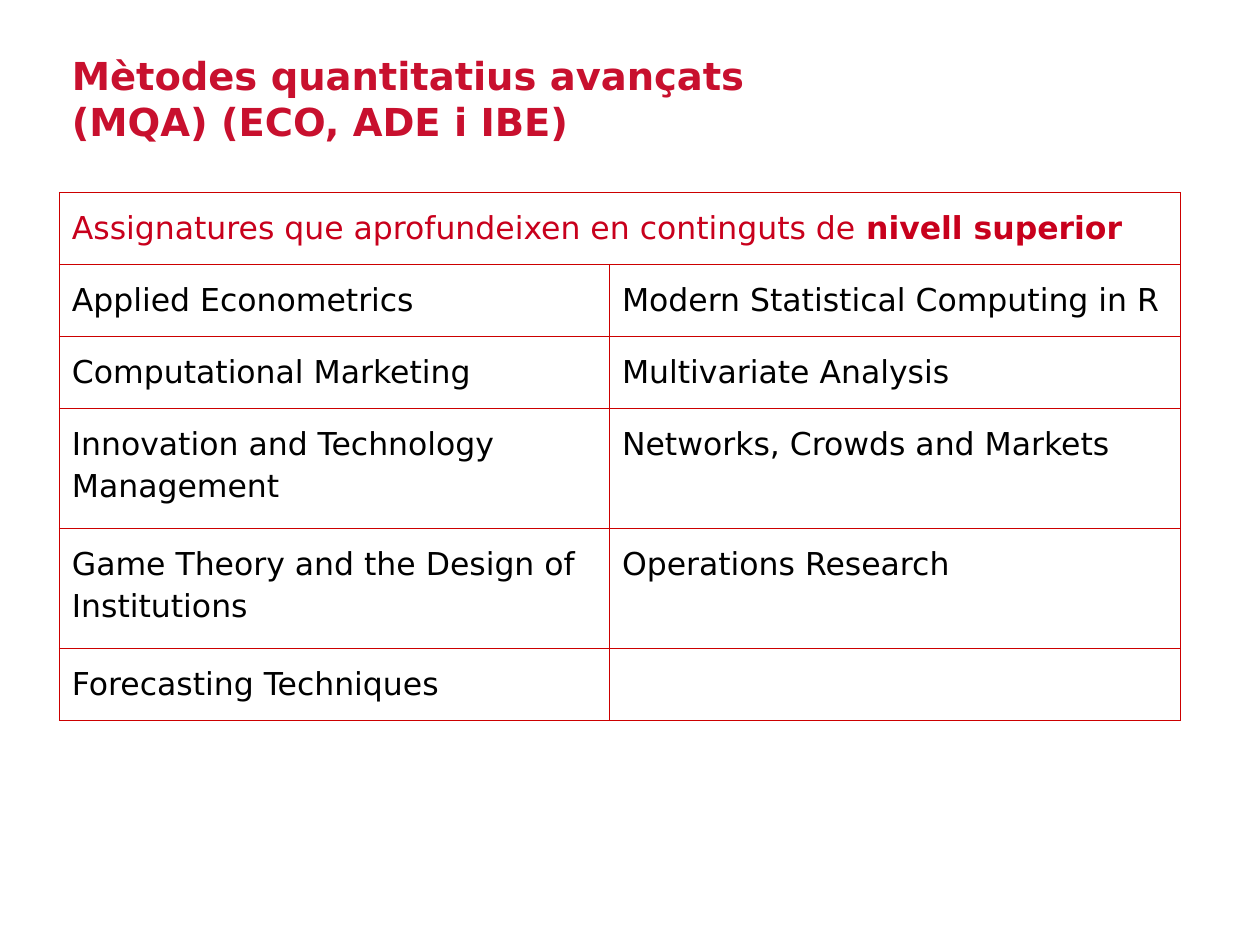
from lxml import etree
from pptx import Presentation
from pptx.dml.color import RGBColor
from pptx.enum.text import MSO_ANCHOR, PP_ALIGN
from pptx.oxml.ns import qn
from pptx.util import Cm, Pt

MIDDLE = MSO_ANCHOR.MIDDLE
LEFT = PP_ALIGN.LEFT

TITLE_RED = RGBColor(0xC8, 0x10, 0x2E)
HEADING_RED = RGBColor(0xC8, 0x00, 0x1C)
BORDER_RED = RGBColor(0xCC, 0x00, 0x00)
BLACK = RGBColor(0x00, 0x00, 0x00)

FONT = "DejaVu Sans"
TITLE_ONLY_LAYOUT = 5
MARGIN = Cm(0.25)
BORDER_WIDTH = Pt(0.75)
TABLE_LEFT = Cm(1.2)
TABLE_TOP = Cm(3.88)
COLUMN_WIDTHS = [Cm(11.09), Cm(11.5)]
SINGLE_ROW = Cm(1.45)
DOUBLE_ROW = Cm(2.42)
ROW_HEIGHTS = [SINGLE_ROW] * 3 + [DOUBLE_ROW] * 2 + [SINGLE_ROW]

TITLE_LINES = ["Mètodes quantitatius avançats", "(MQA) (ECO, ADE i IBE)"]
HEADING = "Assignatures que aprofundeixen en continguts de "
HEADING_EMPHASIS = "nivell superior"
COURSES = [
    ("Applied Econometrics", "Modern Statistical Computing in R"),
    ("Computational Marketing", "Multivariate Analysis"),
    ("Innovation and Technology Management", "Networks, Crowds and Markets"),
    ("Game Theory and the Design of Institutions", "Operations Research"),
    ("Forecasting Techniques", ""),
]


def format_font(font, size, color, bold=False):
    font.name = FONT
    font.size = Pt(size)
    font.bold = bold
    font.color.rgb = color


def set_margins(target):
    target.margin_left = target.margin_right = MARGIN
    target.margin_top = target.margin_bottom = MARGIN


def add_title(slide):
    title = slide.shapes.title
    title.left, title.top = Cm(1.2), Cm(0.85)
    title.width, title.height = Cm(22.58), Cm(2.24)
    text_frame = title.text_frame
    set_margins(text_frame)
    text_frame.vertical_anchor = MIDDLE
    text_frame.text = "\n".join(TITLE_LINES)
    for paragraph in text_frame.paragraphs:
        paragraph.alignment = LEFT
        paragraph.line_spacing = 1.0
        paragraph.space_before = Pt(0)
        for run in paragraph.runs:
            format_font(run.font, 22, TITLE_RED, bold=True)


def add_borders(cell):
    properties = cell._tc.get_or_add_tcPr()
    for side in ("a:lnL", "a:lnR", "a:lnT", "a:lnB"):
        line = etree.SubElement(properties, qn(side), w=str(BORDER_WIDTH))
        fill = etree.SubElement(line, qn("a:solidFill"))
        etree.SubElement(fill, qn("a:srgbClr"), val=str(BORDER_RED))


def style_cell(cell):
    set_margins(cell)
    add_borders(cell)
    cell.fill.background()
    cell.text_frame.paragraphs[0].line_spacing = 1.15


def add_cell_run(cell, text, color, bold=False):
    run = cell.text_frame.paragraphs[0].add_run()
    run.text = text
    format_font(run.font, 18, color, bold)


def add_course_table(slide):
    table = slide.shapes.add_table(
        len(ROW_HEIGHTS), len(COLUMN_WIDTHS), TABLE_LEFT, TABLE_TOP,
        sum(COLUMN_WIDTHS), sum(ROW_HEIGHTS),
    ).table
    table.first_row = False
    table.horz_banding = False
    for column, width in zip(table.columns, COLUMN_WIDTHS):
        column.width = width
    for row, height in zip(table.rows, ROW_HEIGHTS):
        row.height = height
    for cell in table.iter_cells():
        style_cell(cell)

    heading_cell = table.cell(0, 0)
    heading_cell.merge(table.cell(0, 1))
    add_cell_run(heading_cell, HEADING, HEADING_RED)
    add_cell_run(heading_cell, HEADING_EMPHASIS, HEADING_RED, bold=True)
    for row_index, courses in enumerate(COURSES, start=1):
        for column_index, course in enumerate(courses):
            if course:
                add_cell_run(table.cell(row_index, column_index), course, BLACK)


def main():
    presentation = Presentation()
    presentation.slide_width = Cm(25.4)
    presentation.slide_height = Cm(19.05)
    layout = presentation.slide_layouts[TITLE_ONLY_LAYOUT]
    slide = presentation.slides.add_slide(layout)
    add_title(slide)
    add_course_table(slide)
    presentation.save("out.pptx")


if __name__ == "__main__":
    main()
